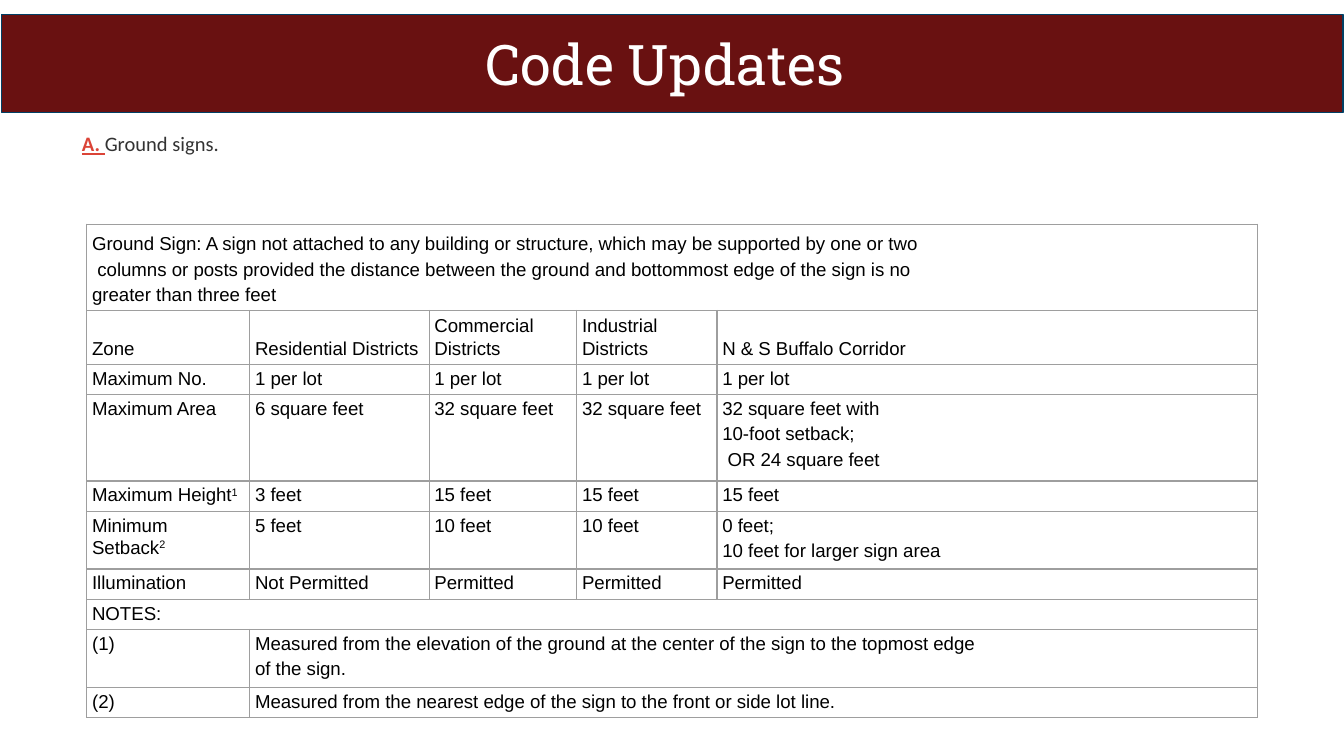
from dataclasses import dataclass

from lxml.etree import SubElement
from pptx import Presentation
from pptx.dml.color import RGBColor as RGB
from pptx.enum.shapes import MSO_SHAPE as SHAPE
from pptx.enum.text import MSO_ANCHOR as ANCHOR, MSO_AUTO_SIZE as AUTO, PP_ALIGN as ALIGN
from pptx.oxml import parse_xml
from pptx.oxml.ns import nsdecls, qn
from pptx.util import Cm, Pt


@dataclass(frozen=True)
class Theme:
    """Colours, fonts and type sizes of the slide."""
    banner: str = "691111"
    banner_line: str = "004065"
    white: str = "FFFFFF"
    black: str = "000000"
    accent: str = "DB4437"
    grey: str = "333333"
    border: str = "9E9E9E"
    title_font: str = "Roboto Slab"
    lead_font: str = "Calibri"
    table_font: str = "Arial"
    title_size: float = 30
    lead_size: float = 11
    table_size: float = 10
    line: float = 0.75


T = Theme()
COLS = [3.08, 3.39, 2.79, 2.65, 10.21]
ONE, TWO, THREE = 0.57, 1.09, 1.63
ROWS = [
    (THREE, ["Ground Sign: A sign not attached to any building or structure, "
             "which may be supported by one or two\n"
             " columns or posts provided the distance between the ground and "
             "bottommost edge of the sign is no\n"
             "greater than three feet"]),
    (1.02, ["Zone", "Residential Districts", "Commercial Districts",
            "Industrial Districts", "N & S Buffalo Corridor"]),
    (ONE, ["Maximum No."] + ["1 per lot"] * 4),
    (THREE, ["Maximum Area", "6 square feet", "32 square feet", "32 square feet",
             "32 square feet with\n10-foot setback;\n OR 24 square feet"]),
    (ONE, ["Maximum Height^1", "3 feet"] + ["15 feet"] * 3),
    (TWO, ["Minimum Setback^2", "5 feet", "10 feet", "10 feet",
           "0 feet;\n10 feet for larger sign area"]),
    (ONE, ["Illumination", "Not Permitted"] + ["Permitted"] * 3),
    (ONE, ["NOTES:"]),
    (TWO, ["(1)", "Measured from the elevation of the ground at the center of the "
                  "sign to the topmost edge\nof the sign."]),
    (ONE, ["(2)", "Measured from the nearest edge of the sign to the front or "
                  "side lot line."]),
]
BOTTOM_ROWS = 2


def style(r, font, size, color, bold=False, underline=False):
    """Format one run."""
    f = r.font
    f.name, f.size, f.bold, f.underline = font, Pt(size), bold, underline
    f.color.rgb = RGB.from_string(color)


def add_banner(s, x, y, w, h):
    """Draw the banner with the slide title over it."""
    sp = s.shapes.add_shape(SHAPE.RECTANGLE, Cm(x), Cm(y), Cm(w), Cm(h))
    sp.shadow.inherit = False
    sp.fill.solid()
    sp.fill.fore_color.rgb = RGB.from_string(T.banner)
    sp.line.color.rgb = RGB.from_string(T.banner_line)
    sp.line.width = Pt(T.line)

    title = s.shapes.title
    title.element.addprevious(sp.element)
    title.left, title.top = Cm(x + 1.47), Cm(y + 0.48)
    title.width, title.height = Cm(w - 2.95), Cm(h - 0.48)
    tf = title.text_frame
    tf.text = "Code Updates"
    tf.auto_size, tf.vertical_anchor = AUTO.NONE, ANCHOR.BOTTOM
    tf.margin_left = tf.margin_top = tf.margin_bottom = Cm(0.3)
    tf.margin_right = Cm(0.57)
    p = tf.paragraphs[0]
    p.alignment = ALIGN.CENTER
    style(p.runs[0], T.title_font, T.title_size, T.white)


def add_lead(s, x, y, w, h):
    """Write the lettered heading above the table."""
    tf = s.shapes.add_textbox(Cm(x), Cm(y), Cm(w), Cm(h)).text_frame
    tf.word_wrap, tf.auto_size = True, AUTO.SHAPE_TO_FIT_TEXT
    tf.vertical_anchor = ANCHOR.MIDDLE
    p = tf.paragraphs[0]
    p.text = "A. "
    style(p.runs[0], T.lead_font, T.lead_size, T.accent, True, True)
    r = p.add_run()
    r.text = "Ground signs."
    style(r, T.lead_font, T.lead_size, T.grey)


def frame_cell(cell, anchor):
    """Give a cell its margins, anchor and four borders."""
    cell.margin_left = cell.margin_right = cell.margin_bottom = Cm(0.1)
    cell.margin_top = Cm(0.05)
    cell.vertical_anchor = anchor
    cell.fill.background()
    tcPr = cell._tc.get_or_add_tcPr()
    for i, side in enumerate("LRTB"):
        ln = parse_xml(f'<a:ln{side} {nsdecls("a")} w="{Pt(T.line)}"/>')
        fill = SubElement(ln, qn("a:solidFill"))
        SubElement(fill, qn("a:srgbClr"), val=T.border)
        tcPr.insert(i, ln)


def fill_cell(cell, text):
    """Write the lines of a cell, with ^ before a superscript."""
    body, _, note = text.partition("^")
    tf = cell.text_frame
    tf.text = "\n".join(line.strip() for line in body.split("\n"))
    if note:
        r = tf.paragraphs[-1].add_run()
        r.text = note
        r._r.get_or_add_rPr().set("baseline", "30000")
    for i, (p, line) in enumerate(zip(tf.paragraphs, body.split("\n"))):
        p.line_spacing, p.space_after = 1.07, Pt(0.8)
        p.space_before = Pt(0.8 if i else 0)
        if line.startswith(" "):
            p._p.get_or_add_pPr().set("marL", str(Cm(0.1)))
        for r in p.runs:
            style(r, T.table_font, T.table_size, T.black)


def add_rules(s, x, y):
    """Build the table of sign rules; a short row stretches its last cell."""
    w, h = sum(COLS), sum(height for height, _ in ROWS)
    table = s.shapes.add_table(len(ROWS), len(COLS), Cm(x), Cm(y), Cm(w), Cm(h)).table
    table.first_row = table.horz_banding = False
    for col, width in zip(table.columns, COLS):
        col.width = Cm(width)
    for i, (height, texts) in enumerate(ROWS):
        row = table.rows[i]
        row.height = Cm(height)
        for cell in row.cells:
            frame_cell(cell, ANCHOR.BOTTOM if i < BOTTOM_ROWS else ANCHOR.TOP)
        if len(texts) < len(COLS):
            table.cell(i, len(texts) - 1).merge(table.cell(i, len(COLS) - 1))
        for j, text in enumerate(texts):
            fill_cell(table.cell(i, j), text)


def main():
    """Build and save the slide."""
    prs = Presentation()
    prs.slide_width, prs.slide_height = Cm(25.4), Cm(14.29)
    s = prs.slides.add_slide(prs.slide_layouts[5])
    add_banner(s, 0.03, 0.28, 25.35, 1.85)
    add_rules(s, 1.64, 4.24)
    add_lead(s, 1.3, 2.34, 25.53, 0.74)
    prs.save("out.pptx")


if __name__ == "__main__":
    main()
